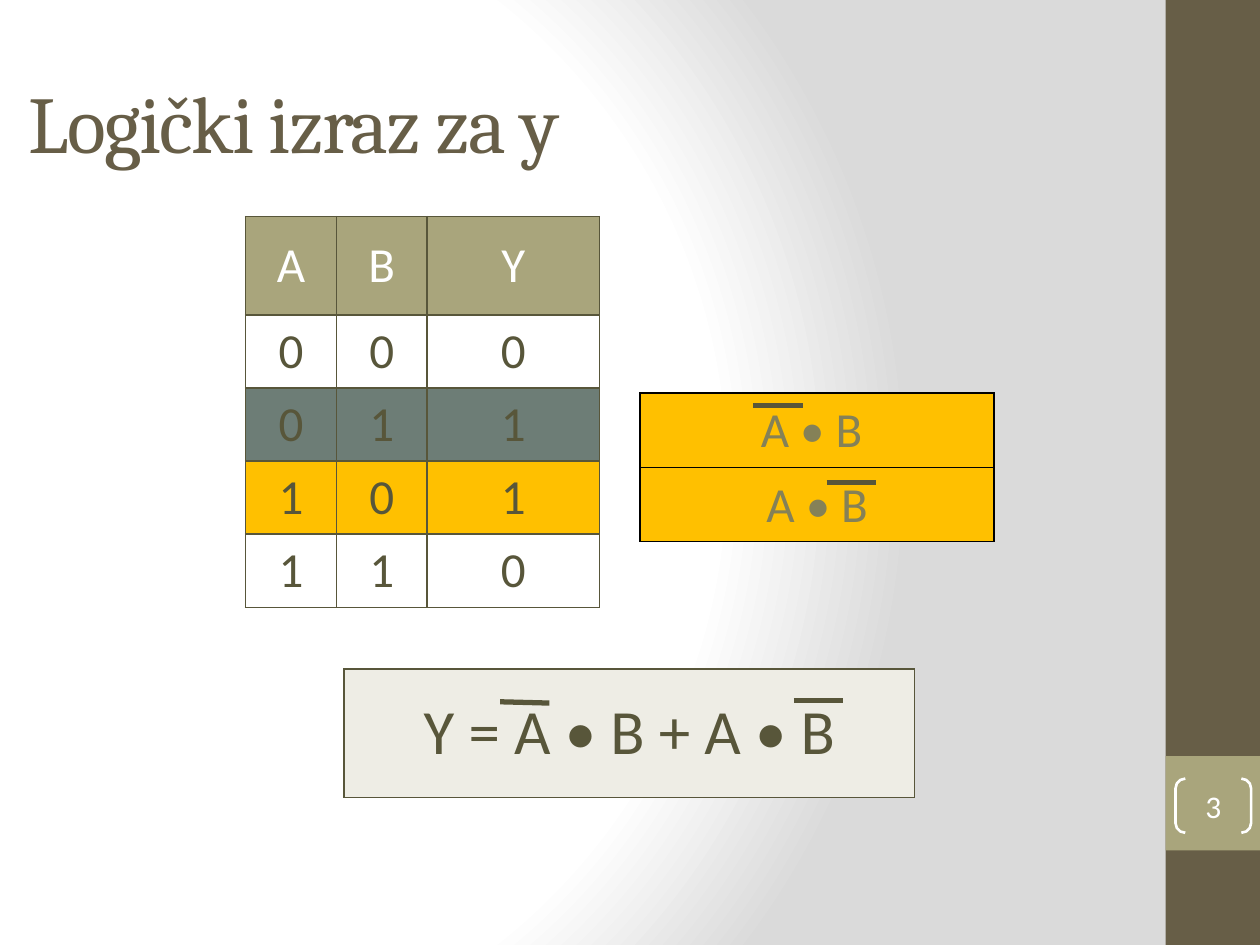
from lxml import etree
from pptx import Presentation
from pptx.dml.color import RGBColor
from pptx.enum.shapes import MSO_CONNECTOR, MSO_SHAPE
from pptx.enum.text import MSO_ANCHOR, PP_ALIGN
from pptx.oxml import parse_xml
from pptx.oxml.ns import nsdecls, qn
from pptx.util import Inches, Pt

RECTANGLE = MSO_SHAPE.RECTANGLE
BRACKETS = MSO_SHAPE.DOUBLE_BRACKET
STRAIGHT = MSO_CONNECTOR.STRAIGHT
MIDDLE = MSO_ANCHOR.MIDDLE
BOTTOM = MSO_ANCHOR.BOTTOM
CENTER = PP_ALIGN.CENTER
LEFT = PP_ALIGN.LEFT

WHITE = RGBColor(0xFF, 0xFF, 0xFF)
BLACK = RGBColor(0, 0, 0)
BROWN = RGBColor(0x67, 0x5E, 0x47)
KHAKI = RGBColor(0xA9, 0xA5, 0x7C)
OLIVE = RGBColor(0x58, 0x56, 0x3A)
LIGHT_OLIVE = RGBColor(0x85, 0x81, 0x57)
SLATE = RGBColor(0x6D, 0x7D, 0x76)
AMBER = RGBColor(0xFF, 0xC0, 0x00)
CREAM = RGBColor(0xEE, 0xED, 0xE5)

TRUTH_ROWS = [
    ("ABY", KHAKI, WHITE),
    ("000", None, OLIVE),
    ("011", SLATE, OLIVE),
    ("101", AMBER, OLIVE),
    ("110", None, OLIVE),
]
PRODUCT_ROWS = [(["A • B "], AMBER, LIGHT_OLIVE), (["A • B"], AMBER, LIGHT_OLIVE)]
RESULT_ROWS = [(["Y = A • B + A • B"], CREAM, OLIVE)]
NEGATION_BARS = [
    (5.98, 3.22, 6.37, 3.22),
    (6.56, 3.83, 6.95, 3.83),
    (3.97, 5.57, 4.36, 5.58),
    (6.3, 5.56, 6.69, 5.56),
]


def set_background(slide):
    """Fill the slide with a round white-to-grey gradient."""
    stops = "".join(
        f'<a:gs pos="{position}"><a:srgbClr val="{color}"/></a:gs>'
        for position, color in [(0, "FFFFFF"), (75000, "FFFFFF"), (100000, "DADADA")]
    )
    background = parse_xml(
        f'<p:bg {nsdecls("p", "a")}><p:bgPr><a:gradFill rotWithShape="1">'
        f"<a:gsLst>{stops}</a:gsLst>"
        '<a:path path="circle"><a:fillToRect l="20000" t="50000" r="100000" b="50000"/></a:path>'
        "</a:gradFill><a:effectLst/></p:bgPr></p:bg>"
    )
    slide.element.cSld.insert(0, background)


def write(frame, text, size, color, font="Calibri", align=CENTER):
    """Write one run into a text frame and return the run."""
    paragraph = frame.paragraphs[0]
    paragraph.alignment = align
    run = paragraph.add_run()
    run.text = text
    run.font.size = Pt(size)
    run.font.name = font
    run.font.color.rgb = color
    return run


def add_title(slide, text):
    """Add the slide heading."""
    heading = slide.shapes.add_textbox(Inches(0.13), Inches(0.5), Inches(9.87), Inches(0.92))
    heading.text_frame.word_wrap = True
    heading.text_frame.vertical_anchor = MIDDLE
    run = write(heading.text_frame, text, 46, BROWN, "Cambria", LEFT)
    run.font._element.set("spc", "-100")


def add_block(slide, top, height, color):
    """Add a plain block of the right-hand side bar."""
    block = slide.shapes.add_shape(
        RECTANGLE, Inches(9.25), Inches(top), Inches(0.75), Inches(height)
    )
    block.shadow.inherit = False
    block.fill.solid()
    block.fill.fore_color.rgb = color
    block.line.fill.background()


def add_page_number(slide, number):
    """Add the page number between brackets."""
    brackets = slide.shapes.add_shape(
        BRACKETS, Inches(9.33), Inches(6.18), Inches(0.6), Inches(0.43)
    )
    brackets.shadow.inherit = False
    brackets.adjustments[0] = 0.18
    brackets.fill.background()
    brackets.line.color.rgb = WHITE
    brackets.line.width = Pt(1.5)
    frame = brackets.text_frame
    frame.margin_left = frame.margin_right = frame.margin_top = frame.margin_bottom = 0
    frame.vertical_anchor = MIDDLE
    write(frame, number, 18, WHITE)


def set_borders(cell, color):
    """Draw a one-point border on all sides of a cell."""
    properties = cell._tc.get_or_add_tcPr()
    for index, side in enumerate(("lnL", "lnR", "lnT", "lnB")):
        border = parse_xml(
            f'<a:{side} {nsdecls("a")} w="12700"><a:solidFill>'
            f'<a:srgbClr val="{color}"/></a:solidFill></a:{side}>'
        )
        properties.insert(index, border)


def add_grid(slide, left, top, widths, heights, rows, size, border, anchor=MIDDLE, inset=(0.07, 0)):
    """Add a bordered table whose rows are (texts, fill, text colour)."""
    table = slide.shapes.add_table(
        len(heights), len(widths), Inches(left), Inches(top),
        Inches(sum(widths)), Inches(sum(heights)),
    ).table
    table.first_row = False
    table.horz_banding = False
    for column, width in zip(table.columns, widths):
        column.width = Inches(width)
    for row, height, (texts, fill, color) in zip(table.rows, heights, rows):
        row.height = Inches(height)
        for cell, text in zip(row.cells, texts):
            cell.margin_left = cell.margin_right = Inches(inset[0])
            cell.margin_top = cell.margin_bottom = Inches(inset[1])
            cell.vertical_anchor = anchor
            if fill is None:
                cell.fill.background()
            else:
                cell.fill.solid()
                cell.fill.fore_color.rgb = fill
            set_borders(cell, border)
            write(cell.text_frame, text, size, color)


def add_negation_bar(slide, x1, y1, x2, y2):
    """Add the bar above a negated variable."""
    bar = slide.shapes.add_connector(STRAIGHT, Inches(x1), Inches(y1), Inches(x2), Inches(y2))
    bar.line.color.rgb = OLIVE
    bar.line.width = Pt(3)
    etree.SubElement(bar._element.spPr, qn("a:effectLst"))


def main():
    """Build the slide and save it."""
    deck = Presentation()
    deck.slide_width = Inches(10)
    deck.slide_height = Inches(7.5)
    slide = deck.slides.add_slide(deck.slide_layouts[6])
    set_background(slide)
    add_block(slide, 0, 7.5, BROWN)
    add_block(slide, 6, 0.75, KHAKI)
    add_title(slide, "Logički izraz za y")
    add_page_number(slide, "3")
    add_grid(slide, 1.95, 1.72, [0.72, 0.72, 1.37], [0.78] + [0.58] * 4, TRUTH_ROWS, 28, OLIVE)
    add_grid(slide, 5.08, 3.12, [2.81], [0.59] * 2, PRODUCT_ROWS, 28, BLACK, BOTTOM, (0.1, 0.05))
    add_grid(slide, 2.73, 5.31, [4.53], [1.02], RESULT_ROWS, 36, OLIVE)
    for ends in NEGATION_BARS:
        add_negation_bar(slide, *ends)
    deck.save("out.pptx")


if __name__ == "__main__":
    main()
